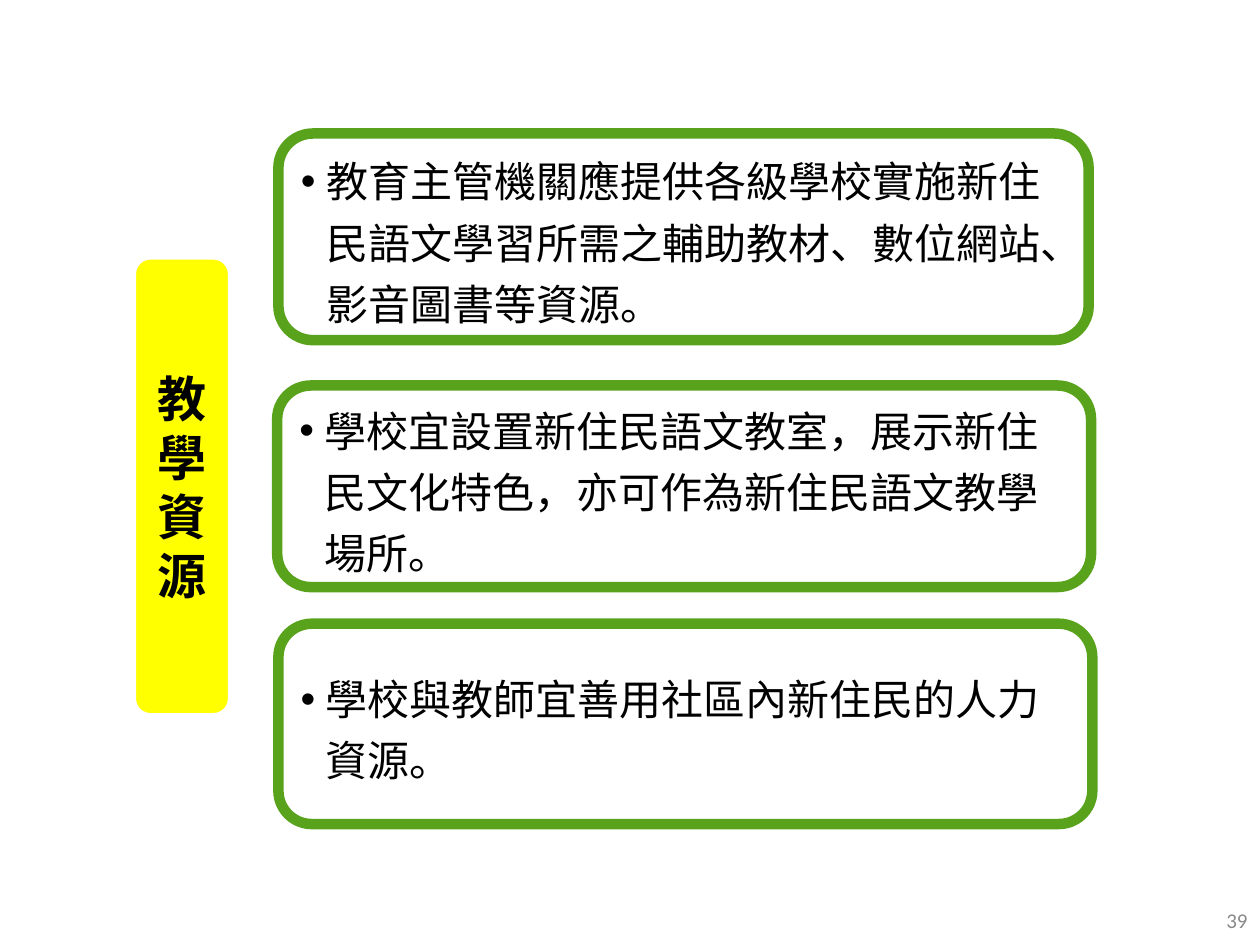
from lxml import etree
from pptx import Presentation
from pptx.dml.color import RGBColor
from pptx.enum.shapes import MSO_SHAPE
from pptx.enum.text import MSO_ANCHOR, PP_ALIGN
from pptx.oxml.ns import qn
from pptx.util import Pt

PANEL = MSO_SHAPE.FLOWCHART_ALTERNATE_PROCESS
MIDDLE = MSO_ANCHOR.MIDDLE
LEFT, CENTER, RIGHT = PP_ALIGN.LEFT, PP_ALIGN.CENTER, PP_ALIGN.RIGHT

YELLOW = RGBColor(0xFF, 0xFF, 0x00)
GREEN = RGBColor(0x58, 0xA3, 0x1B)
WHITE = RGBColor(0xFF, 0xFF, 0xFF)
BLACK = RGBColor(0x00, 0x00, 0x00)
GRAY = RGBColor(0x89, 0x89, 0x89)

CHINESE_FONT = "Noto Sans CJK SC"
TITLE_FORMAT = {"name": CHINESE_FONT, "size": Pt(28), "bold": True}
BODY_FORMAT = {"name": CHINESE_FONT, "size": Pt(24), "bold": False}
NUMBER_FORMAT = {"name": "Calibri", "size": Pt(12), "bold": False}

TITLE = "教學資源"
TITLE_BOX = (77, 147.6, 54, 260.6)
NUMBER_BOX = (558, 511.2, 162, 28.8)
RESOURCES = [
    ((159.1, 76.3, 463, 118.1),
     "教育主管機關應提供各級學校實施新住民語文學習所需之輔助教材、數位網站、影音圖書等資源。"),
    ((158.4, 220.3, 465.1, 115.2),
     "學校宜設置新住民語文教室，展示新住民文化特色，亦可作為新住民語文教學場所。"),
    ((159.1, 356.4, 465.1, 114.5),
     "學校與教師宜善用社區內新住民的人力資源。"),
]


def write_paragraph(paragraph, text, font_format, color, alignment):
    run = paragraph.add_run()
    run.text = text
    paragraph.alignment = alignment
    for name, value in font_format.items():
        setattr(run.font, name, value)
    run.font.color.rgb = color
    # East Asian characters take their typeface from a separate element.
    east_asian = etree.SubElement(run.font._element, qn("a:ea"))
    east_asian.set("typeface", font_format["name"])


def add_bullet(paragraph, indent):
    properties = paragraph._p.get_or_add_pPr()
    properties.set("marL", str(indent))
    properties.set("indent", str(-indent))
    etree.SubElement(properties, qn("a:buFont")).set("typeface", "Arial")
    etree.SubElement(properties, qn("a:buChar")).set("char", "•")


def add_panel(slide, box, fill, line, line_width):
    shape = slide.shapes.add_shape(PANEL, *map(Pt, box))
    shape.shadow.inherit = False
    shape.fill.solid()
    shape.fill.fore_color.rgb = fill
    shape.line.color.rgb = line
    shape.line.width = Pt(line_width)
    shape.text_frame.word_wrap = True
    shape.text_frame.vertical_anchor = MIDDLE
    return shape.text_frame


def add_title(slide, box):
    """Stack the title's characters, one paragraph each."""
    frame = add_panel(slide, box, YELLOW, WHITE, 1.5)
    for index, character in enumerate(TITLE):
        paragraph = frame.add_paragraph() if index else frame.paragraphs[0]
        write_paragraph(paragraph, character, TITLE_FORMAT, BLACK, CENTER)


def add_resource(slide, box, text):
    paragraph = add_panel(slide, box, WHITE, GREEN, 6).paragraphs[0]
    add_bullet(paragraph, Pt(14.4))
    paragraph.line_spacing = Pt(35)
    write_paragraph(paragraph, text, BODY_FORMAT, BLACK, LEFT)


def add_page_number(slide, box, number):
    frame = slide.shapes.add_textbox(*map(Pt, box)).text_frame
    frame.word_wrap = True
    frame.vertical_anchor = MIDDLE
    write_paragraph(frame.paragraphs[0], number, NUMBER_FORMAT, GRAY, RIGHT)


def main():
    presentation = Presentation()
    presentation.slide_width = Pt(720)
    presentation.slide_height = Pt(540)
    slide = presentation.slides.add_slide(presentation.slide_layouts[6])
    add_title(slide, TITLE_BOX)
    add_page_number(slide, NUMBER_BOX, "39")
    for box, text in RESOURCES:
        add_resource(slide, box, text)
    presentation.save("out.pptx")


if __name__ == "__main__":
    main()
